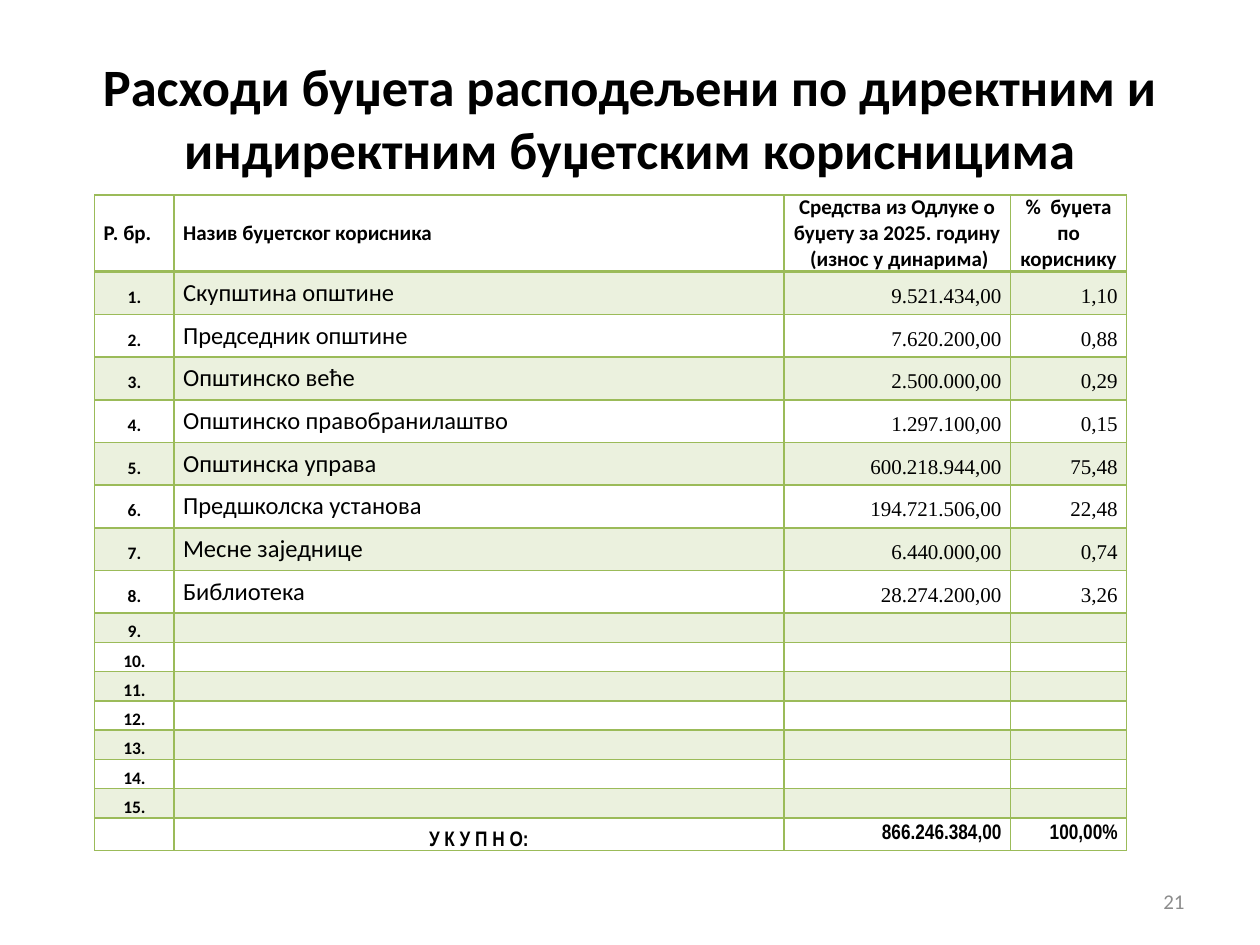
import pptx
import pptx.util
import pptx.dml.color
import pptx.enum.text
import pptx.oxml
import pptx.oxml.ns
from pptx.util import Cm

COLORS = {"text": "000000", "line": "9BBB59", "band": "EBF1DE", "number": "8C8C8C"}
ALIGN = pptx.enum.text.PP_ALIGN
ANCHOR = pptx.enum.text.MSO_ANCHOR

HEADERS = [
    "Р. бр.",
    "Назив буџетског корисника",
    "Средства из Одлуке о буџету за 2025. годину  (износ у динарима)",
    "%  буџета по кориснику",
]
USERS = [
    ("Скупштина општине", "9.521.434,00", "1,10"),
    ("Председник општине", "7.620.200,00", "0,88"),
    ("Општинско веће", "2.500.000,00", "0,29"),
    ("Општинско правобранилаштво", "1.297.100,00", "0,15"),
    ("Општинска управа", "600.218.944,00", "75,48"),
    ("Предшколска установа", "194.721.506,00", "22,48"),
    ("Месне заједнице", "6.440.000,00", "0,74"),
    ("Библиотека", "28.274.200,00", "3,26"),
]
TOTAL = ["", "У К У П Н О:", "866.246.384,00", "100,00%"]
NUMBERED_ROWS = 15
COLUMN_WIDTHS = [1.6, 12.29, 4.57, 2.34]
HEADER_HEIGHT, USER_HEIGHT, EMPTY_HEIGHT, TOTAL_HEIGHT = 1.55, 0.86, 0.59, 0.66


class Deck:
    def __init__(self, prs):
        self.s = prs.slides.add_slide(prs.slide_layouts[6])
        self.font = "Calibri"

    def set_text(self, tf, text, size, align, bold=False, font=None, color="text"):
        tf.text = text
        p = tf.paragraphs[0]
        p.alignment = align
        for r in p.runs:
            r.font.size = pptx.util.Pt(size)
            r.font.name = font or self.font
            r.font.bold = bold
            r.font.color.rgb = pptx.dml.color.RGBColor.from_string(COLORS[color])
        if not text:
            end = pptx.oxml.parse_xml(
                f'<a:endParaRPr {pptx.oxml.ns.nsdecls("a")} sz="{size * 100}"/>')
            p._p.append(end)

    def text(self, left, top, width, height, text, **style):
        sp = self.s.shapes.add_textbox(Cm(left), Cm(top), Cm(width), Cm(height))
        tf = sp.text_frame
        tf.word_wrap = True
        tf.vertical_anchor = ANCHOR.MIDDLE
        self.set_text(tf, text, **style)

    def table(self, left, top, widths, heights):
        sp = self.s.shapes.add_table(len(heights), len(widths), Cm(left), Cm(top),
                                     Cm(sum(widths)), Cm(sum(heights)))
        table = sp.table
        table.first_row = table.horz_banding = False
        for column, width in zip(table.columns, widths):
            column.width = Cm(width)
        for row, height in zip(table.rows, heights):
            row.height = Cm(height)
        return table

    def cell(self, cell, text, anchor=ANCHOR.BOTTOM, top=0, bottom=0, band=False,
             lines=(1, 1, 1, 1), **style):
        cell.margin_left = cell.margin_right = Cm(0.18)
        cell.margin_top, cell.margin_bottom = Cm(top), Cm(bottom)
        cell.vertical_anchor = anchor
        self.set_text(cell.text_frame, text, **style)
        if band:
            cell.fill.solid()
            cell.fill.fore_color.rgb = pptx.dml.color.RGBColor.from_string(COLORS["band"])
        else:
            cell.fill.background()
        for i, (side, width) in enumerate(zip("LRTB", lines)):
            cell._tc.tcPr.insert(i, pptx.oxml.parse_xml(
                f'<a:ln{side} {pptx.oxml.ns.nsdecls("a")} w="{pptx.util.Pt(width)}">'
                f'<a:solidFill><a:srgbClr val="{COLORS["line"]}"/></a:solidFill></a:ln{side}>'))


def fill_table(deck):
    empty_rows = NUMBERED_ROWS - len(USERS)
    heights = ([HEADER_HEIGHT] + [USER_HEIGHT] * len(USERS)
               + [EMPTY_HEIGHT] * empty_rows + [TOTAL_HEIGHT])
    table = deck.table(1.91, 3.93, COLUMN_WIDTHS, heights)

    for col, text in enumerate(HEADERS):
        deck.cell(table.cell(0, col), text, anchor=ANCHOR.MIDDLE, lines=(1, 1, 1, 2),
                  size=12, bold=True, align=ALIGN.LEFT if col < 2 else ALIGN.CENTER)

    for row in range(1, NUMBERED_ROWS + 1):
        used = row <= len(USERS)
        values = USERS[row - 1] if used else ("", "", "")
        margin = 0.13 if used else 0
        common = dict(top=margin, bottom=margin, band=row % 2 == 1,
                      lines=(1, 1, 2 if row == 1 else 1, 1))
        deck.cell(table.cell(row, 0), f"{row}.", size=10, bold=True,
                  align=ALIGN.CENTER, **common)
        deck.cell(table.cell(row, 1), values[0], size=14 if used else 10,
                  align=ALIGN.LEFT, **common)
        for col in (2, 3):
            deck.cell(table.cell(row, col), values[col - 1], size=12 if used else 10,
                      font="Times New Roman", align=ALIGN.RIGHT, **common)

    for col, text in enumerate(TOTAL):
        deck.cell(table.cell(NUMBERED_ROWS + 1, col), text, size=12, bold=True,
                  font="Arial Narrow", bottom=0.13 if col > 1 else 0,
                  align=ALIGN.RIGHT if col > 1 else ALIGN.CENTER)


def main():
    prs = pptx.Presentation()
    prs.slide_width, prs.slide_height = Cm(25.4), Cm(19.05)
    deck = Deck(prs)
    deck.text(1.27, 0.76, 22.86, 3.18,
              "Расходи буџета расподељени по директним и индиректним буџетским корисницима",
              size=30, bold=True, align=ALIGN.CENTER)
    fill_table(deck)
    deck.text(18.2, 17.66, 5.93, 1.01, "21", size=12, align=ALIGN.RIGHT, color="number")
    prs.save("out.pptx")


if __name__ == "__main__":
    main()
